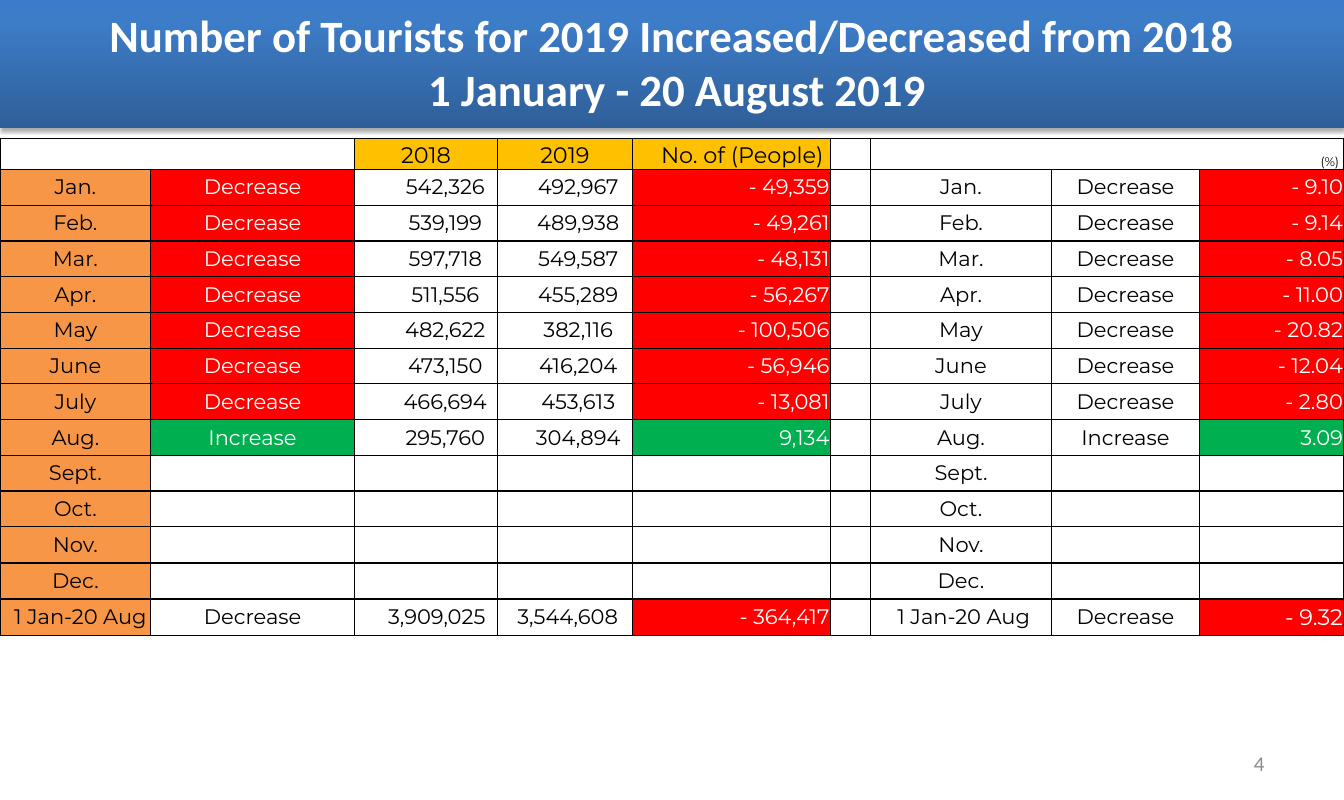
import pptx
import pptx.util
import pptx.oxml
import pptx.dml.color
import pptx.enum.text
from dataclasses import dataclass
from pptx.util import Cm


@dataclass(frozen=True)
class Theme:
    heading_font: str = "Calibri"
    table_font: str = "Montserrat"
    black: str = "000000"
    white: str = "FFFFFF"
    grey: str = "8C8C8C"
    amber: str = "FFC000"
    orange: str = "F79646"
    red: str = "FF0000"
    green: str = "00B050"
    title_size: int = 32
    header_size: int = 16
    body_size: int = 15
    unit_size: int = 9


theme = Theme()
ALIGN = pptx.enum.text.PP_ALIGN
ANCHOR = pptx.enum.text.MSO_ANCHOR
NS = 'xmlns:a="http://schemas.openxmlformats.org/drawingml/2006/main"'


def write(frame, text, font=theme.table_font, size=theme.body_size,
          color=theme.black, bold=False, align=ALIGN.CENTER):
    frame.text = text
    for paragraph in frame.paragraphs:
        paragraph.alignment = align
        for run in paragraph.runs:
            run.font.name = font
            run.font.size = pptx.util.Pt(size)
            run.font.bold = bold
            run.font.color.rgb = pptx.dml.color.RGBColor.from_string(color)


def fill_cell(cell, text, fill=None, left=0.03, right=0.02, anchor=ANCHOR.MIDDLE, **text_format):
    """Write into a table cell; left and right are margins in centimetres."""
    cell.margin_left, cell.margin_right = Cm(left), Cm(right)
    cell.margin_top = cell.margin_bottom = 0
    cell.vertical_anchor = anchor
    if fill:
        cell.fill.solid()
        cell.fill.fore_color.rgb = pptx.dml.color.RGBColor.from_string(fill)
    if text:
        write(cell.text_frame, text, **text_format)


prs = pptx.Presentation()
prs.slide_width, prs.slide_height = Cm(33.865), Cm(20.152)
slide = prs.slides.add_slide(prs.slide_layouts[5])

# Title band
title = slide.shapes.title
title.left, title.top, title.width, title.height = 0, Cm(-0.13), prs.slide_width, Cm(3.35)
page_number = slide.shapes.add_textbox(Cm(24.26), Cm(18.68), Cm(7.9), Cm(1.07))
for box in (title, page_number):
    frame = box.text_frame
    frame.word_wrap = True
    frame.auto_size = pptx.enum.text.MSO_AUTO_SIZE.NONE
    frame.vertical_anchor = ANCHOR.MIDDLE
    frame.margin_left = frame.margin_right = Cm(0.3)
    frame.margin_top = frame.margin_bottom = Cm(0.15)
write(title.text_frame,
      "Number of Tourists for 2019 Increased/Decreased from 2018\v 1 January - 20 August 2019",
      font=theme.heading_font, size=theme.title_size, color=theme.white, bold=True)
write(page_number.text_frame, "4", font=theme.heading_font, color=theme.grey, align=ALIGN.RIGHT)

stops = "".join(f'<a:gs pos="{pos}000"><a:srgbClr val="{color}"/></a:gs>'
                for pos, color in ((0, "2F5F99"), (80, "3D7CC7"), (100, "3A7CCB")))
title_properties = title.element.spPr
title_properties.append(pptx.oxml.parse_xml(
    f'<a:gradFill {NS} rotWithShape="1"><a:gsLst>{stops}</a:gsLst>'
    '<a:lin ang="16200000" scaled="0"/></a:gradFill>'))
title_properties.append(pptx.oxml.parse_xml(
    f'<a:effectLst {NS}><a:outerShdw blurRad="40000" dist="23000" dir="5400000" rotWithShape="0">'
    f'<a:srgbClr val="{theme.black}"><a:alpha val="35000"/></a:srgbClr></a:outerShdw></a:effectLst>'))

# Tourist numbers: period, trend, 2018, 2019, difference, difference in %
periods = [
    ("Jan.", "Decrease", "542,326", "492,967", "- 49,359", "- 9.10"),
    ("Feb.", "Decrease", "539,199", "489,938", "- 49,261", "- 9.14"),
    ("Mar.", "Decrease", "597,718", "549,587", "- 48,131", "- 8.05"),
    ("Apr.", "Decrease", "511,556", "455,289", "- 56,267", "- 11.00"),
    ("May", "Decrease", "482,622", "382,116", "- 100,506", "- 20.82"),
    ("June", "Decrease", "473,150", "416,204", "- 56,946", "- 12.04"),
    ("July", "Decrease", "466,694", "453,613", "- 13,081", "- 2.80"),
    ("Aug.", "Increase", "295,760", "304,894", "9,134", "3.09"),
    *((month, "", "", "", "", "") for month in ("Sept.", "Oct.", "Nov.", "Dec.")),
    ("1 Jan-20 Aug", "Decrease", "3,909,025", "3,544,608", "- 364,417", "- 9.32"),
]
column_widths = [3.79, 5.14, 3.6, 3.4, 4.99, 1.01, 4.56, 3.73, 3.64]
row_heights = [0.78] + [0.9] * 10 + [0.91] * 3
table = slide.shapes.add_table(len(row_heights), len(column_widths), 0, Cm(3.49),
                               Cm(sum(column_widths)), Cm(sum(row_heights))).table
table.first_row = table.horz_banding = False
for column, width in zip(table.columns, column_widths):
    column.width = Cm(width)
for row, height in zip(table.rows, row_heights):
    row.height = Cm(height)

for cell in table.iter_cells():
    cell.fill.background()
    fill_cell(cell, "")
    for position, side in enumerate(("lnL", "lnR", "lnT", "lnB")):
        cell._tc.get_or_add_tcPr().insert(position, pptx.oxml.parse_xml(
            f'<a:{side} {NS} w="12700"><a:solidFill><a:srgbClr val="{theme.black}"/>'
            f'</a:solidFill></a:{side}>'))

table.cell(0, 0).merge(table.cell(0, 1))
table.cell(0, 6).merge(table.cell(0, 8))
for col, year in ((2, "2018"), (3, "2019")):
    fill_cell(table.cell(0, col), year, theme.amber, anchor=ANCHOR.BOTTOM, size=theme.header_size)
fill_cell(table.cell(0, 4), "No. of (People)", theme.amber, right=0.17, anchor=ANCHOR.BOTTOM,
          size=theme.header_size, align=ALIGN.RIGHT)
fill_cell(table.cell(0, 6), "(%)", right=0.12, anchor=ANCHOR.BOTTOM,
          size=theme.unit_size, align=ALIGN.RIGHT)

for row, (period, trend, year_2018, year_2019, people, percent) in enumerate(periods, 1):
    is_total = row == len(periods)
    trend_fill = {"Decrease": theme.red, "Increase": theme.green}.get(trend)
    fill_cell(table.cell(row, 0), period, theme.orange, left=0.28 if is_total else 0.03)
    fill_cell(table.cell(row, 1), trend, None if is_total else trend_fill,
              color=theme.black if is_total else theme.white)
    fill_cell(table.cell(row, 2), year_2018, left=0.57 if is_total else 1)
    fill_cell(table.cell(row, 3), year_2019, left=0.17 if is_total else 0.7)
    fill_cell(table.cell(row, 4), people, trend_fill, color=theme.white, align=ALIGN.RIGHT)
    fill_cell(table.cell(row, 6), period, left=0.17 if is_total else 0.03)
    fill_cell(table.cell(row, 7), trend)
    fill_cell(table.cell(row, 8), percent, trend_fill, color=theme.white, align=ALIGN.RIGHT,
              size=theme.header_size if is_total else theme.body_size)

prs.save("out.pptx")
